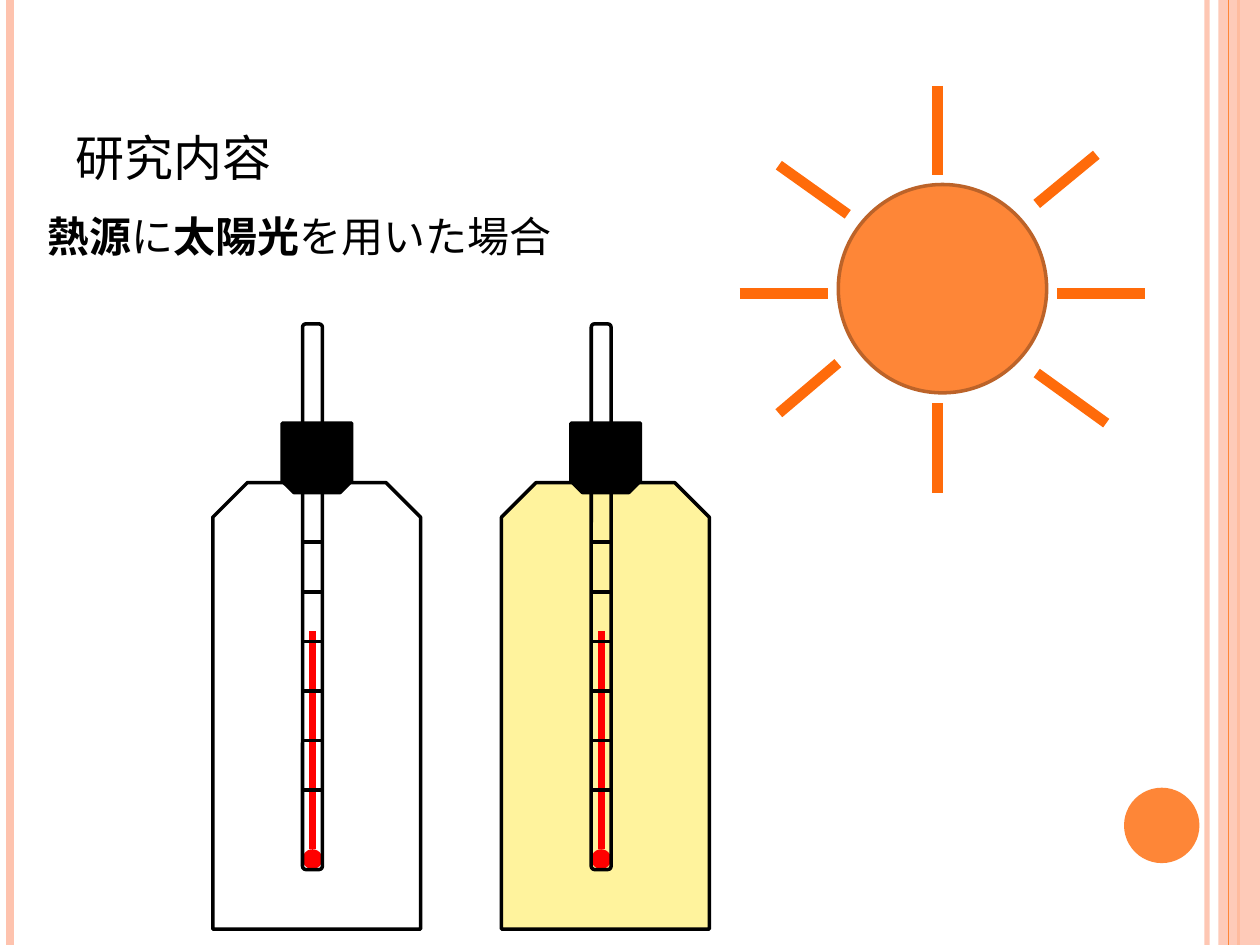
from lxml.etree import SubElement
from pptx import Presentation
from pptx.dml.color import RGBColor
from pptx.enum.shapes import MSO_CONNECTOR as Link, MSO_SHAPE as Shape
from pptx.enum.text import MSO_ANCHOR as Anchor
from pptx.oxml.ns import qn
from pptx.util import Cm, Pt

BLACK = RGBColor(0x00, 0x00, 0x00)
RED = RGBColor(0xFF, 0x00, 0x00)
YELLOW = RGBColor(0xFF, 0xF3, 0x9D)
ORANGE = RGBColor(0xFE, 0x86, 0x37)
BROWN = RGBColor(0xBC, 0x63, 0x29)
RAY = RGBColor(0xFF, 0x6B, 0x0A)
PINK = RGBColor(0xFE, 0xC3, 0xAE)

FONT = "TeX Gyre Schola"
WIDTH, HEIGHT = 25.4, 19.05
STRIPES = [(24.33, PINK, 3, 93), (0.2, PINK, 4.5, 100),
           (24.97, ORANGE, 1.5, 100), (24.77, ORANGE, 0.75, 100)]
RAYS = [(15.7, 3.33, 17.09, 4.32), (20.9, 7.52, 22.3, 8.53),
        (18.9, 1.73, 18.9, 3.53), (18.9, 8.13, 18.9, 9.93),
        (15.7, 8.33, 16.89, 7.32), (20.9, 4.11, 22.1, 3.12),
        (14.91, 5.92, 16.69, 5.92), (21.31, 5.92, 23.09, 5.92)]
BOTTLES = [(10.11, YELLOW), (4.29, None)]


def set_opacity(fill, percent):
    """Make a solid fill partly transparent."""
    color = fill._xPr.find(qn("a:solidFill"))[0]
    SubElement(color, qn("a:alpha")).set("val", str(percent * 1000))


def add_figure(page, kind, left, top, width, height, fill=None, outline=None):
    """Add a preset shape with optional fill and 2 pt outline."""
    figure = page.shapes.add_shape(kind, Cm(left), Cm(top), Cm(width), Cm(height))
    figure.shadow.inherit = False
    if fill is None:
        figure.fill.background()
    else:
        figure.fill.solid()
        figure.fill.fore_color.rgb = fill
    if outline is None:
        figure.line.fill.background()
    else:
        figure.line.color.rgb = outline
        figure.line.width = Pt(2)
    return figure


def add_line(page, start_x, start_y, end_x, end_y, color, weight, opacity=100):
    """Add a straight line without shadow."""
    ends = (Cm(value) for value in (start_x, start_y, end_x, end_y))
    line = page.shapes.add_connector(Link.STRAIGHT, *ends)
    line.line.color.rgb = color
    line.line.width = Pt(weight)
    if opacity < 100:
        set_opacity(line.line.fill, opacity)
    SubElement(line._element.spPr, qn("a:effectLst"))


def add_text(page, left, top, width, height, spans, anchor=Anchor.TOP):
    """Add a one-paragraph text box from (text, font format) spans."""
    box = page.shapes.add_textbox(Cm(left), Cm(top), Cm(width), Cm(height))
    frame = box.text_frame
    frame.word_wrap = True
    frame.vertical_anchor = anchor
    para = frame.paragraphs[0]
    for text, formats in spans:
        span = para.add_run()
        span.text = text
        span.font.color.rgb = BLACK
        for name, value in {"name": FONT, **formats}.items():
            setattr(span.font, name, value)
    return para


def add_frame(page):
    """Draw the decorative edges of the page."""
    for left, color, weight, opacity in STRIPES:
        add_line(page, left, 0, left, HEIGHT, color, weight, opacity)
    band = add_figure(page, Shape.RECTANGLE, 24.56, 0, WIDTH - 24.56, HEIGHT, PINK)
    set_opacity(band.fill, 87)
    page.shapes._spTree.insert(5, band._element)
    add_figure(page, Shape.OVAL, 22.66, 15.88, 1.52, 1.52, ORANGE)


def add_headings(page):
    """Write the title and the experiment condition."""
    title = add_text(page, 1.27, 0.76, 20.75, 3.18,
                     [("研究内容", {"size": Pt(35)})], Anchor.BOTTOM)
    title.runs[0].font._element.set("cap", "small")
    words = [("熱源", True), ("に", False), ("太陽光", True), ("を用いた場合", False)]
    body = add_text(page, 0.71, 4.11, 11.99, 1.4,
                    [(text, {"size": Pt(24), "bold": bold}) for text, bold in words])
    body.space_before = Pt(6)
    indents = body._p.get_or_add_pPr()
    for name, value in {"marL": Cm(0.76), "indent": -Cm(0.76)}.items():
        indents.set(name, str(int(value)))


def add_bottle(page, left, fill):
    """Draw a bottle with thermometer, scale marks and stopper."""
    add_figure(page, Shape.SNIP_2_SAME_RECTANGLE, left, 9.73, 4.19, 9, fill, BLACK)
    tube = left + 1.81
    add_figure(page, Shape.OVAL, tube, 17.12, 0.4, 0.4, RED)
    add_line(page, tube + 0.2, 17.12, tube + 0.2, 12.72, RED, 4)
    add_figure(page, Shape.ROUNDED_RECTANGLE, tube, 6.53, 0.4, 11, None, BLACK)
    for step in range(7):
        mark = 9.93 + step
        add_line(page, tube, mark, tube + 0.4, mark, BLACK, 2)
    stopper = add_figure(page, Shape.SNIP_2_SAME_RECTANGLE,
                         left + 1.4, 8.53, 1.4, 1.4, BLACK, BLACK)
    stopper.rotation = 180


def add_sun(page):
    """Draw the sun and its rays."""
    add_figure(page, Shape.OVAL, 16.9, 3.72, 4.2, 4.2, ORANGE, BROWN)
    for ray in RAYS:
        add_line(page, *ray, RAY, 6)


def main():
    """Build and save the slide."""
    deck = Presentation()
    deck.slide_width, deck.slide_height = Cm(WIDTH), Cm(HEIGHT)
    page = deck.slides.add_slide(deck.slide_layouts[6])
    add_frame(page)
    add_headings(page)
    for left, fill in BOTTLES:
        add_bottle(page, left, fill)
    add_sun(page)
    deck.save("out.pptx")


if __name__ == "__main__":
    main()
